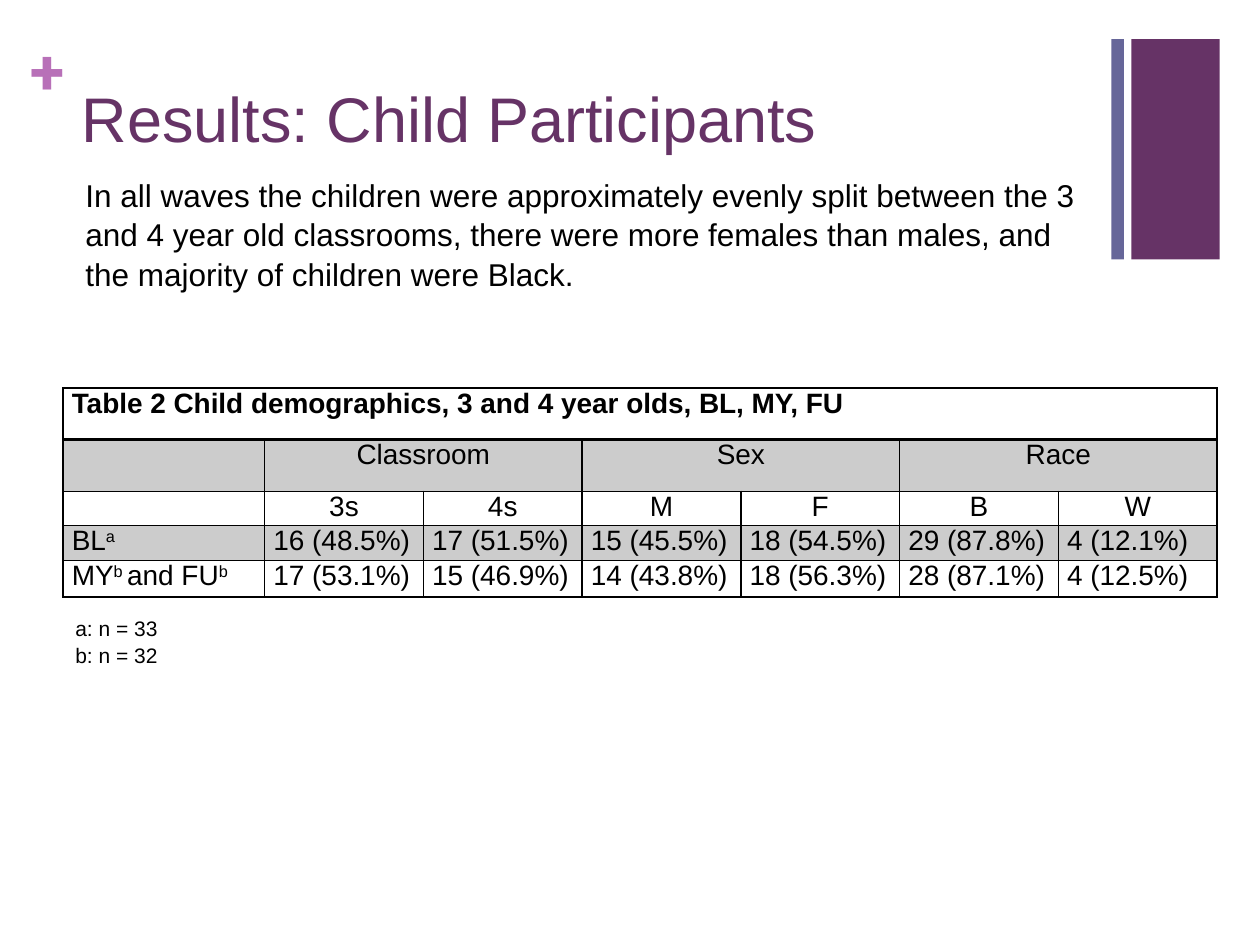
from lxml import etree
from pptx import Presentation
from pptx.dml.color import RGBColor
from pptx.enum.shapes import MSO_SHAPE
from pptx.enum.text import MSO_ANCHOR, MSO_AUTO_SIZE, PP_ALIGN
from pptx.oxml.ns import qn
from pptx.util import Inches, Pt

RECTANGLE = MSO_SHAPE.RECTANGLE
TOP = MSO_ANCHOR.TOP
GROW = MSO_AUTO_SIZE.SHAPE_TO_FIT_TEXT
LEFT, CENTER = PP_ALIGN.LEFT, PP_ALIGN.CENTER
BLACK = RGBColor(0x00, 0x00, 0x00)
PURPLE = RGBColor(0x66, 0x33, 0x66)
SLATE = RGBColor(0x66, 0x66, 0x99)
ORCHID = RGBColor(0xB8, 0x70, 0xB8)


def add_span(para, text, size, color=BLACK, font="Arial", bold=False):
    span = para.add_run()
    span.text = text
    span.font.size = Pt(size)
    span.font.name = font
    span.font.bold = bold
    span.font.color.rgb = color
    return span


def add_border(cell, side, width):
    line = etree.SubElement(cell._tc.get_or_add_tcPr(), qn(f"a:{side}"), w=str(Pt(width)))
    fill = etree.SubElement(line, qn("a:solidFill"))
    etree.SubElement(fill, qn("a:srgbClr"), val=str(BLACK))


deck = Presentation()
deck.slide_width, deck.slide_height = Inches(10), Inches(7.5)
page = deck.slides.add_slide(deck.slide_layouts[6])

for left, width, color in [(8.98, 0.7, PURPLE), (8.82, 0.1, SLATE)]:
    bar = page.shapes.add_shape(RECTANGLE, Inches(left), Inches(0.31), Inches(width), Inches(1.75))
    bar.shadow.inherit = False
    bar.fill.solid()
    bar.fill.fore_color.rgb = color
    bar.line.fill.background()

plus = page.shapes.add_textbox(Inches(0.24), Inches(0.25), Inches(0.29), Inches(0.61))
frame = plus.text_frame
frame.word_wrap = True
frame.margin_left = frame.margin_right = frame.margin_top = frame.margin_bottom = 0
add_span(frame.paragraphs[0], "+", 36, ORCHID, "Roboto Slab", True)

title = page.shapes.add_textbox(Inches(0.55), Inches(0.53), Inches(8.26), Inches(0.89))
title.text_frame.word_wrap = True
title.text_frame.margin_top = Inches(0.1)
add_span(title.text_frame.paragraphs[0], "Results: Child Participants", 36, PURPLE)

summary = page.shapes.add_textbox(Inches(0.58), Inches(1.33), Inches(8.17), Inches(1.01))
summary.text_frame.word_wrap = True
summary.text_frame.auto_size = GROW
para = summary.text_frame.paragraphs[0]
para.line_spacing = 1.05
add_span(para, "In all waves the children were approximately evenly split between the 3 and 4 year old "
         "classrooms, there were more females than males, and the majority of children were Black.", 18)

ROWS = [
    ["Table 2 Child demographics, 3 and 4 year olds, BL, MY, FU", "", "", "", "", "", ""],
    ["", "Classroom", "", "Sex", "", "Race", ""],
    ["", "3s", "4s", "M", "F", "B", "W"],
    ["BL^a", "16 (48.5%)", "17 (51.5%)", "15 (45.5%)", "18 (54.5%)", "29 (87.8%)", "4 (12.1%)"],
    ["MY^b ^and FU^b", "17 (53.1%)", "15 (46.9%)", "14 (43.8%)", "18 (56.3%)", "28 (87.1%)", "4 (12.5%)"],
]
HEIGHTS = [0.41, 0.41, 0.27, 0.28, 0.29]
WIDTHS = [1.6] + [1.26] * 6
SHADED_ROWS = (1, 3)
HEADER_ROWS = (1, 2)

table = page.shapes.add_table(len(ROWS), len(WIDTHS), Inches(0.5), Inches(3.08),
                              Inches(sum(WIDTHS)), Inches(sum(HEIGHTS))).table
table.first_row = table.horz_banding = False
for column, width in zip(table.columns, WIDTHS):
    column.width = Inches(width)
for row, height in zip(table.rows, HEIGHTS):
    row.height = Inches(height)
table.cell(0, 0).merge(table.cell(0, 6))
for column in (1, 3, 5):
    table.cell(1, column).merge(table.cell(1, column + 1))

for r, texts in enumerate(ROWS):
    for c, text in enumerate(texts):
        cell = table.cell(r, c)
        cell.margin_left = cell.margin_right = Inches(0.07)
        cell.margin_top = cell.margin_bottom = 0
        cell.vertical_anchor = TOP
        for side in ("lnL", "lnR", "lnT", "lnB"):
            heavy = (r, side) in ((0, "lnB"), (1, "lnT"))
            add_border(cell, side, 2 if heavy else 1)
        if r in SHADED_ROWS:
            cell.fill.solid()
            cell.fill.fore_color.rgb = BLACK
            shade = cell._tc.tcPr.find(qn("a:solidFill")).find(qn("a:srgbClr"))
            etree.SubElement(shade, qn("a:alpha"), val="20000")
        else:
            cell.fill.background()
        para = cell.text_frame.paragraphs[0]
        para.alignment = CENTER if r in HEADER_ROWS else LEFT
        para.font.size = Pt(16)
        for i, part in enumerate(text.split("^") if text else []):
            span = add_span(para, part, 16, bold=r == 0)
            if i % 2:
                span.font._element.set("baseline", "30000")

notes = page.shapes.add_textbox(Inches(0.5), Inches(4.83), Inches(0.86), Inches(0.5))
frame = notes.text_frame
frame.word_wrap = False
frame.auto_size = GROW
for i, text in enumerate(["a: n = 33", "b: n = 32"]):
    para = frame.add_paragraph() if i else frame.paragraphs[0]
    para.line_spacing = 1.05
    add_span(para, text, 12)

deck.save("out.pptx")
